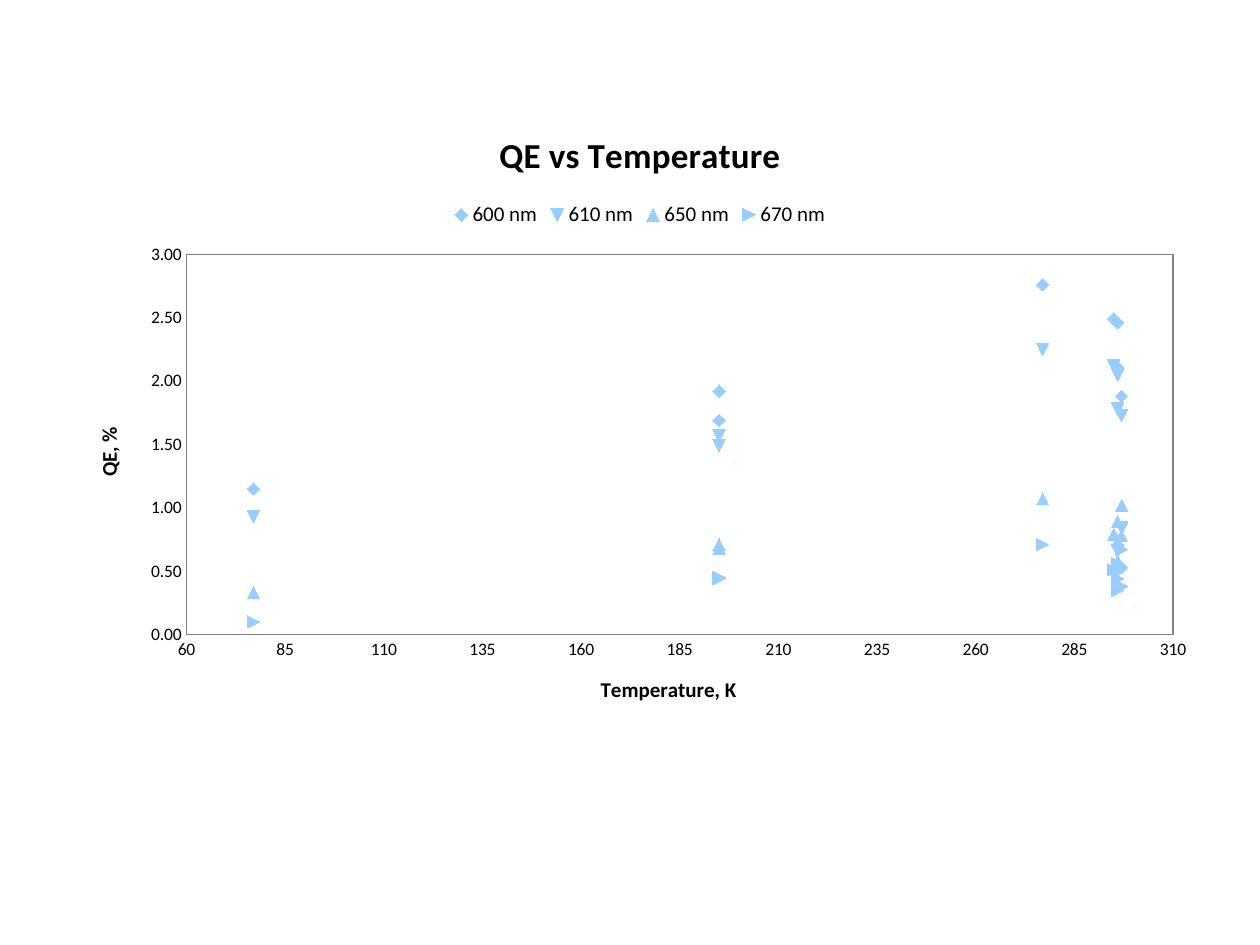
from dataclasses import dataclass

from lxml.etree import SubElement
from pptx import Presentation
from pptx.chart.data import XyChartData
from pptx.dml.color import RGBColor
from pptx.enum.chart import XL_CHART_TYPE as ChartType
from pptx.enum.chart import XL_LEGEND_POSITION as LegendPosition
from pptx.enum.chart import XL_MARKER_STYLE as MarkerStyle
from pptx.enum.chart import XL_TICK_MARK as TickMark
from pptx.oxml import parse_xml
from pptx.oxml.ns import nsdecls, qn
from pptx.util import Inches, Pt


@dataclass(frozen=True)
class Theme:
    """Colours, font and type sizes of the slide."""
    font: str = "Calibri"
    text: RGBColor = RGBColor(0x00, 0x00, 0x00)
    marker: RGBColor = RGBColor(0x99, 0xCC, 0xFF)
    frame: RGBColor = RGBColor(0x80, 0x80, 0x80)
    title: Pt = Pt(20)
    label: Pt = Pt(12)
    tick: Pt = Pt(10)


THEME = Theme()
TEMPERATURES = (295, 277, 296, 195, 296, 195, 297, 77, 297, 296)
EFFICIENCIES = {
    "600 nm": (2.49, 2.76, 2.46, 1.92, 2.11, 1.69, 1.88, 1.15, 0.53, 0.51),
    "610 nm": (2.12, 2.25, 2.05, 1.57, 1.78, 1.49, 1.73, 0.93, 0.84, 0.66),
    "650 nm": (0.79, 1.07, 0.89, 0.68, 0.74, 0.71, 1.02, 0.33, 0.78, 0.58),
    "670 nm": (0.51, 0.71, 0.56, 0.44, 0.44, 0.45, 0.67, 0.1, 0.38, 0.35),
}
MARKERS = (MarkerStyle.DIAMOND, None, MarkerStyle.TRIANGLE, MarkerStyle.DOT)


def set_title(owner, text, size):
    """Give a chart or an axis a bold title."""
    text_frame = (owner.chart_title if hasattr(owner, "chart_title") else owner.axis_title).text_frame
    text_frame.text = text
    font = text_frame.paragraphs[0].runs[0].font
    font.name, font.size, font.bold = THEME.font, size, True
    font.color.rgb = THEME.text


def format_axis(axis, title, minimum, maximum, step, number_format):
    """Set the title, scale, labels and line of an axis."""
    set_title(axis, title, THEME.label)
    axis.minimum_scale, axis.maximum_scale, axis.major_unit = minimum, maximum, step
    axis.has_major_gridlines = False
    axis.major_tick_mark = axis.minor_tick_mark = TickMark.NONE
    axis.tick_labels.number_format = number_format
    axis.tick_labels.number_format_is_linked = False
    axis.format.line.color.rgb = THEME.frame


def format_series(series, style):
    """Show a series as markers without a line."""
    series.format.line.fill.background()
    series.marker.style = style
    series.marker.size = 7
    series.marker.format.fill.solid()
    series.marker.format.fill.fore_color.rgb = THEME.marker
    series.marker.format.line.fill.background()


def frame_plot(chart, x, y, width, height):
    """Place the inner plot area by fractions of the chart and outline it."""
    plot_area = chart.element.find(".//" + qn("c:plotArea"))
    for old_layout in plot_area.findall(qn("c:layout")):
        plot_area.remove(old_layout)
    layout = parse_xml(f"<c:layout {nsdecls('c')}><c:manualLayout/></c:layout>")
    values = {"layoutTarget": "inner", "xMode": "edge", "yMode": "edge",
              "x": x, "y": y, "w": width, "h": height}
    for name, value in values.items():
        SubElement(layout[0], qn(f"c:{name}")).set("val", str(value))
    plot_area.insert(0, layout)
    plot_area.append(parse_xml(
        f"<c:spPr {nsdecls('c', 'a')}><a:noFill/><a:ln w='9525'><a:solidFill>"
        f"<a:srgbClr val='{THEME.frame}'/></a:solidFill></a:ln></c:spPr>"))


def add_efficiency_chart(slide, left, top, width, height):
    """Add the scatter chart of efficiency against temperature."""
    chart_data = XyChartData()
    for name, efficiencies in EFFICIENCIES.items():
        series = chart_data.add_series(name)
        for temperature, efficiency in zip(TEMPERATURES, efficiencies):
            series.add_data_point(temperature, efficiency)
    chart = slide.shapes.add_chart(ChartType.XY_SCATTER, left, top, width, height, chart_data).chart
    chart.font.name, chart.font.size = THEME.font, THEME.tick
    chart.font.color.rgb = THEME.text
    set_title(chart, "QE vs Temperature", THEME.title)
    chart.has_legend = True
    chart.legend.position = LegendPosition.TOP
    chart.legend.include_in_layout = False
    chart.legend.font.name, chart.legend.font.size = THEME.font, THEME.label
    chart.plots[0].vary_by_categories = False
    format_axis(chart.category_axis, "Temperature, K", 60, 310, 25, "0")
    format_axis(chart.value_axis, "QE, %", 0, 3, 0.5, "0.00")
    for series, style in zip(chart.plots[0].series, MARKERS):
        format_series(series, style)
    frame_plot(chart, 0.1, 0.24, 0.87, 0.61)


def main():
    """Build and save the presentation."""
    presentation = Presentation()
    presentation.slide_width, presentation.slide_height = Inches(10), Inches(7.5)
    slide = presentation.slides.add_slide(presentation.slide_layouts[6])
    add_efficiency_chart(slide, Inches(0.58), Inches(0.83), Inches(9), Inches(4.95))
    presentation.save("out.pptx")


if __name__ == "__main__":
    main()
